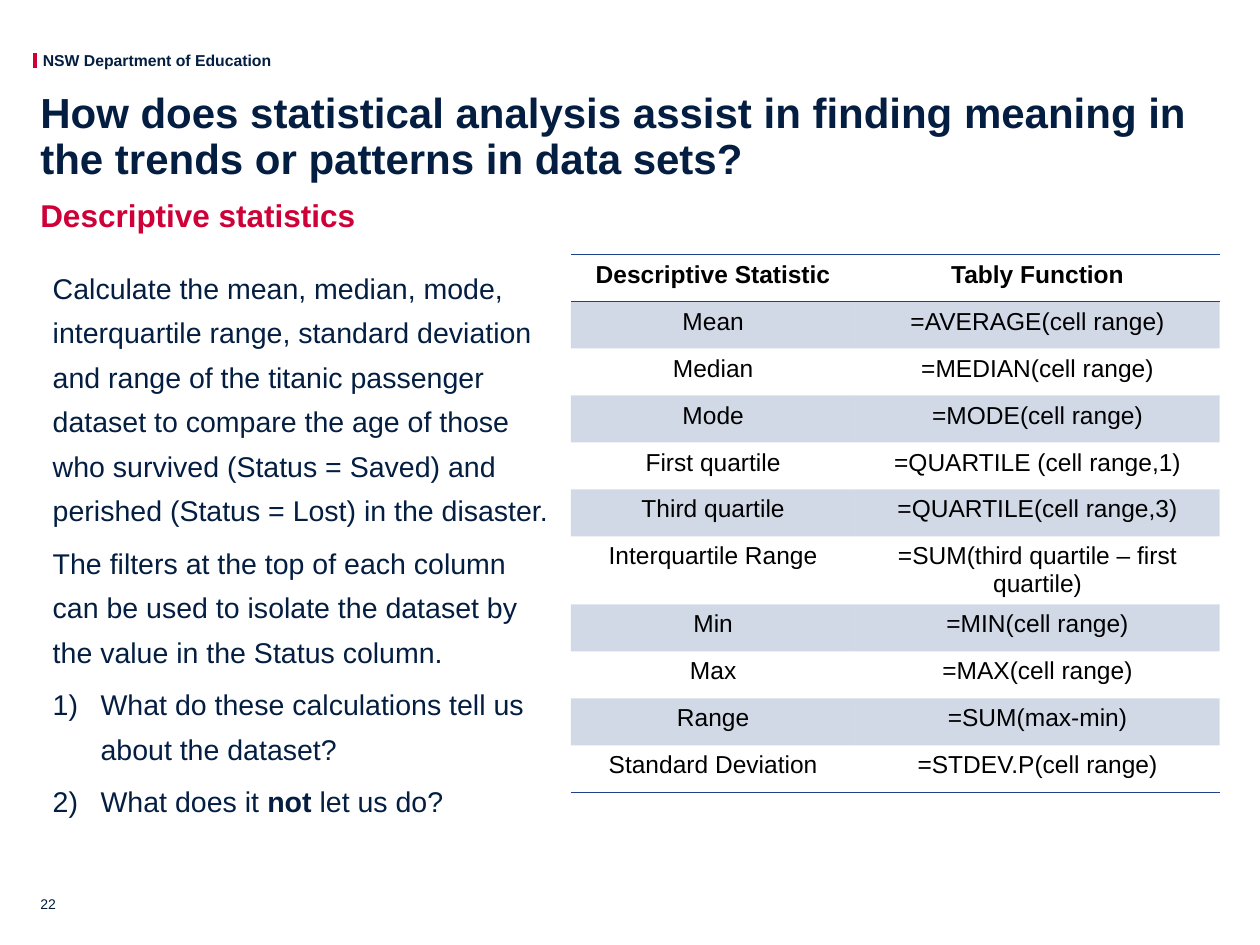
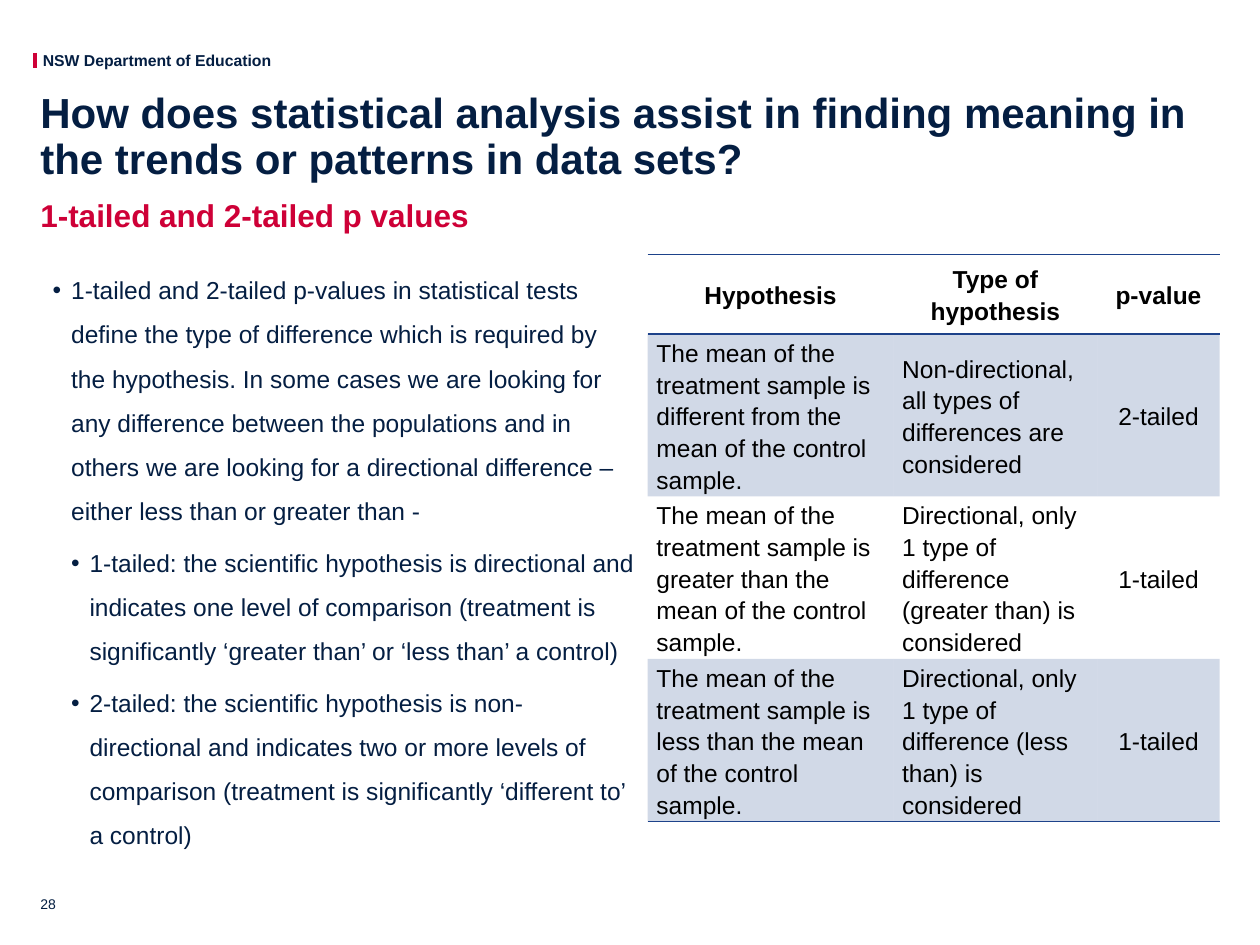
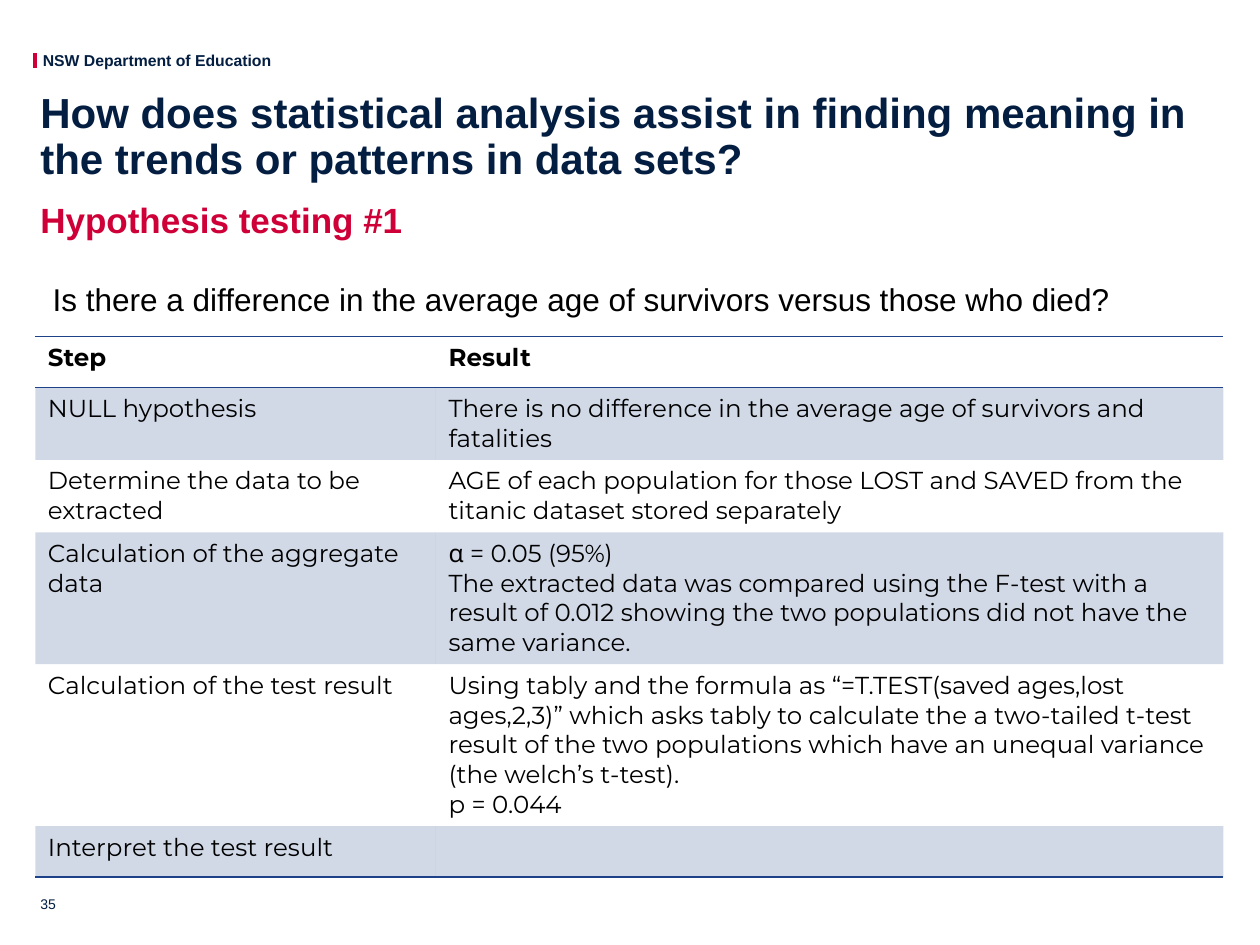
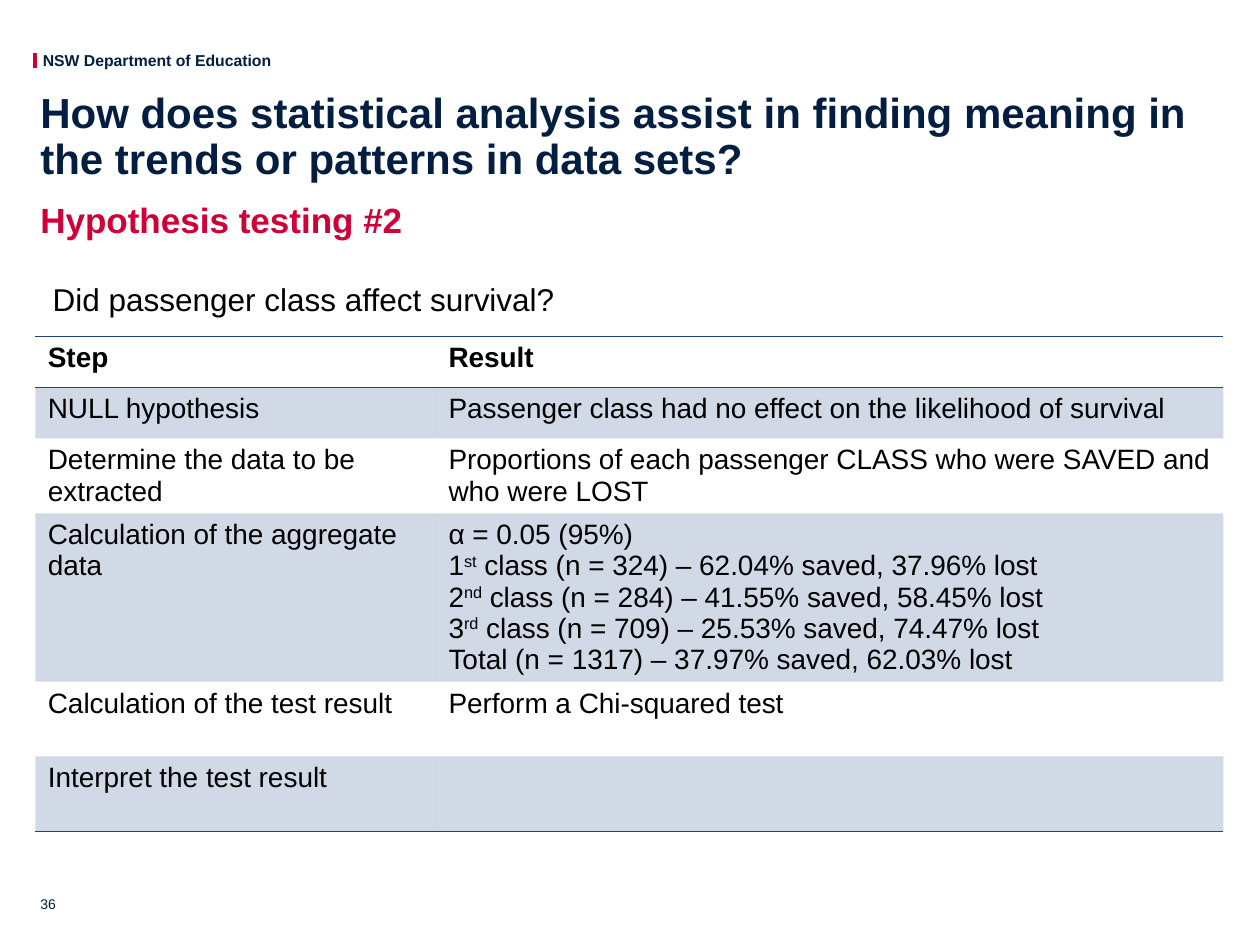
from dataclasses import dataclass

from lxml import etree
from pptx import Presentation
from pptx.dml.color import RGBColor
from pptx.enum.shapes import MSO_CONNECTOR
from pptx.enum.text import MSO_ANCHOR, MSO_AUTO_SIZE, PP_ALIGN
from pptx.oxml.ns import qn
from pptx.util import Inches, Pt

LEFT, MID = PP_ALIGN.LEFT, PP_ALIGN.CENTER
TOP, HALF, LOW = MSO_ANCHOR.TOP, MSO_ANCHOR.MIDDLE, MSO_ANCHOR.BOTTOM
STRAIGHT = MSO_CONNECTOR.STRAIGHT
NO_FIT = MSO_AUTO_SIZE.NONE


@dataclass(frozen=True)
class Theme:
    navy: str = "041E42"
    red: str = "CE0037"
    blue: str = "1D428A"
    black: str = "000000"
    font: str = "Arial"
    alt: str = "Montserrat"
    title: float = 24
    head: float = 20
    sub: float = 18
    large: float = 16.3
    body: float = 16
    small: float = 14
    brand: float = 9
    page: float = 8
    after: float = 4.5


T = Theme()
WIDTH, HEIGHT = Inches(10), Inches(7.5)
COL, ROW = WIDTH / 100, HEIGHT / 75
PAD = (1, 0.5, 1, 0.5)
FLUSH = (0, 0, 0, 0)
PLAIN = "{2D5ABB26-0587-4C30-8999-92F81FD0307C}"
TITLE = ("How does statistical analysis assist in finding meaning in "
         "the trends or patterns in data sets?")
STEPS = ["NULL hypothesis", "Determine the data to be extracted",
         "Calculation of the aggregate data",
         "Calculation of the test result", "Interpret the test result"]


def place(box):
    x, y, w, h = box
    return round(x * COL), round(y * ROW), round(w * COL), round(h * ROW)


def inset(item, pad):
    item.margin_left, item.margin_right = round(pad[0] * COL), round(pad[2] * COL)
    item.margin_top, item.margin_bottom = round(pad[1] * ROW), round(pad[3] * ROW)


def mark(para, kind, hang, level):
    prop = para._p.get_or_add_pPr()
    prop.set("marL", str(round(hang * (level + 1) * COL)))
    prop.set("indent", str(round(-hang * COL)))
    if kind == "number":
        etree.SubElement(prop, qn("a:buAutoNum"), type="arabicParenR")
    else:
        etree.SubElement(prop, qn("a:buFont"), typeface=T.font)
        etree.SubElement(prop, qn("a:buChar"), char="•")


def write(frame, text, size=T.small, color=T.navy, font=T.font, bold=False,
          align=LEFT, line=None, after=None, bullet=None, hang=0, level=0,
          raised=False):
    para = frame.add_paragraph() if frame.text else frame.paragraphs[0]
    para.alignment, para.level = align, level
    if line:
        para.line_spacing = line
    if after:
        para.space_after = Pt(after)
    if bullet:
        mark(para, bullet, hang, level)
    for i, part in enumerate(text.split("|")):
        run = para.add_run()
        run.text = part
        look = run.font
        look.name, look.size = font, Pt(size)
        look.color.rgb = RGBColor.from_string(color)
        look.bold = bold or (i % 2 == 1 and not raised)
        if raised and i % 2:
            run._r.get_or_add_rPr().set("baseline", "30000")


def area(slide, box, pad=PAD, anchor=TOP, wrap=True):
    frame = slide.shapes.add_textbox(*place(box)).text_frame
    frame.word_wrap, frame.vertical_anchor = wrap, anchor
    frame.auto_size = NO_FIT
    inset(frame, pad)
    return frame


def brand(slide, box):
    x, y, w, h = box
    left, top, _, tall = place((x, y + 0.2, w, h - 0.3))
    bar = slide.shapes.add_connector(STRAIGHT, left, top, left, top + tall)
    bar.line.color.rgb = RGBColor.from_string(T.red)
    bar.line.width = Pt(2.5)
    etree.SubElement(bar.element.spPr, qn("a:effectLst"))
    name = area(slide, (x + 0.6, y, w - 0.6, h), pad=FLUSH, wrap=False)
    write(name, "NSW Department of Education", size=T.brand, bold=True)


def start(deck, topic, page, size=T.sub):
    slide = deck.slides.add_slide(deck.slide_layouts[5])
    title = slide.shapes.title
    title.left, title.top, title.width, title.height = place((3.2, 8.2, 94.3, 5.5))
    frame = title.text_frame
    frame.word_wrap, frame.auto_size = True, NO_FIT
    frame.vertical_anchor = HALF
    inset(frame, FLUSH)
    write(frame, TITLE, size=T.title, bold=True, line=0.9)
    brand(slide, (2.8, 4, 18.9, 1.5))
    head = area(slide, (3.2, 13.6, 94.4, 4.6), pad=(0, 0.5, 1, 0.5))
    write(head, topic, size=size, color=T.red, bold=True, line=1.5, after=T.after)
    foot = area(slide, (3.2, 68.4, 3.3, 4), pad=FLUSH, anchor=LOW)
    write(foot, str(page), size=T.page)
    return slide


def edge(cell, sides):
    prop = cell._tc.get_or_add_tcPr()
    for i, side in enumerate(sides):
        line = etree.Element(qn("a:ln" + side), w=str(Pt(1)))
        fill = etree.SubElement(line, qn("a:solidFill"))
        etree.SubElement(fill, qn("a:srgbClr"), val=T.blue)
        prop.insert(i, line)


def tint(cell, on):
    if not on:
        cell.fill.background()
        return
    cell.fill.solid()
    cell.fill.fore_color.rgb = RGBColor.from_string(T.blue)
    tone = cell._tc.get_or_add_tcPr().find(".//" + qn("a:srgbClr"))
    etree.SubElement(tone, qn("a:alpha"), val="20000")


def grid(slide, spot, cols, tall, rows, aligns, pad=PAD, anchor=TOP, **form):
    box = (*spot, sum(cols), sum(tall))
    item = slide.shapes.add_table(len(rows), len(cols), *place(box))
    for style in item.element.iter(qn("a:tableStyleId")):
        style.text = PLAIN
    table = item.table
    for col, wide in zip(table.columns, cols):
        col.width = round(wide * COL)
    for r, (row, high) in enumerate(zip(rows, tall)):
        table.rows[r].height = round(high * ROW)
        for c, text in enumerate(row):
            cell = table.cell(r, c)
            inset(cell, pad)
            cell.vertical_anchor = anchor
            tint(cell, r % 2)
            edge(cell, "TB" if r == 0 else "B" if r == len(rows) - 1 else "")
            for part in text.split("\n") if text else []:
                write(cell.text_frame, part, color=T.black, bold=r == 0,
                      align=aligns[c] if r else aligns[-1], raised=True, **form)


def describe(deck):
    slide = start(deck, "Descriptive statistics", 22)
    frame = area(slide, (3.2, 20.2, 42.1, 46.3))
    form = dict(size=T.large, line=1.3, after=T.after)
    write(frame, "Calculate the mean, median, mode, interquartile range, standard "
          "deviation and range of the titanic passenger dataset to compare the age "
          "of those who survived (Status = Saved) and perished (Status = Lost) in "
          "the disaster.", **form)
    write(frame, "The filters at the top of each column can be used to isolate the "
          "dataset by the value in the Status column.", **form)
    for ask in ("What do these calculations tell us about the dataset?",
                "What does it |not |let us do?"):
        write(frame, ask, bullet="number", hang=3.8, **form)
    rows = [("Descriptive Statistic", "Tably Function"),
            ("Mean", "=AVERAGE(cell range)"),
            ("Median", "=MEDIAN(cell range)"),
            ("Mode", "=MODE(cell range)"),
            ("First quartile", "=QUARTILE (cell range,1)"),
            ("Third quartile", "=QUARTILE(cell range,3)"),
            ("Interquartile Range", "=SUM(third quartile – first quartile)"),
            ("Min", "=MIN(cell range)"),
            ("Max", "=MAX(cell range)"),
            ("Range", "=SUM(max-min)"),
            ("Standard Deviation", "=STDEV.P(cell range)")]
    tall = [3.73] * 6 + [5.4] + [3.73] * 4
    grid(slide, (45.3, 20.2), (22.6, 28.9), tall, rows, (MID, MID))


def tails(deck):
    slide = start(deck, "1-tailed and 2-tailed p values", 28)
    frame = area(slide, (3.2, 20.2, 48.2, 47))
    points = [
        (0, "1-tailed and 2-tailed p-values in statistical tests define the type of "
            "difference which is required by the hypothesis. In some cases we are "
            "looking for any difference between the populations and in others we are "
            "looking for a directional difference – either less than or greater "
            "than -"),
        (1, "1-tailed: the scientific hypothesis is directional and indicates one "
            "level of comparison (treatment is significantly ‘greater than’ or ‘less "
            "than’ a control)"),
        (1, "2-tailed: the scientific hypothesis is non-directional and indicates two "
            "or more levels of comparison (treatment is significantly ‘different to’ "
            "a control)")]
    for level, text in points:
        write(frame, text, line=1.5, after=T.after, bullet="dot", hang=1.46,
              level=level)
    mean = "The mean of the treatment sample is {} the mean of the control sample."
    way = "Directional, only 1 type of difference ({}) is considered"
    rows = [("Hypothesis", "Type of hypothesis", "p-value"),
            (mean.format("different from"),
             "Non-directional, all types of differences are considered", "2-tailed")]
    rows += [(mean.format(side), way.format(side), "1-tailed")
             for side in ("greater than", "less than")]
    grid(slide, (51.4, 20.2), (19.5, 16.2, 9.7), (6.3, 12.9, 12.9, 12.9), rows,
         (LEFT, LEFT, MID), pad=(0.7, 0, 0.7, 0), anchor=HALF, line=1.15)


def trial(deck, number, page, ask, facts, tall, **form):
    slide = start(deck, f"Hypothesis testing #{number}", page, size=T.head)
    frame = area(slide, (3.2, 20.2, 94.4, 46.3))
    write(frame, ask, size=T.sub, color=T.black, line=1.5, after=T.after)
    rows = [("Step", "Result"), *zip(STEPS, facts)]
    grid(slide, (2.8, 26.7), (31.8, 62.5), tall, rows, (LEFT, LEFT), **form)


def main():
    deck = Presentation()
    deck.slide_width, deck.slide_height = WIDTH, HEIGHT
    describe(deck)
    tails(deck)
    trial(deck, 1, 35,
          "Is there a difference in the average age of survivors versus those who died?",
          ["There is no difference in the average age of survivors and fatalities",
           "AGE of each population for those LOST and SAVED from the titanic dataset "
           "stored separately",
           "α = 0.05 (95%)\nThe extracted data was compared using the F-test with a "
           "result of 0.012 showing the two populations did not have the same variance.",
           "Using tably and the formula as “=T.TEST(saved ages,lost ages,2,3)” which "
           "asks tably to calculate the a two-tailed t-test result of the two "
           "populations which have an unequal variance (the welch’s t-test).\n"
           "p = 0.044", ""],
          (4.05, 5.75, 5.75, 10.45, 12.85, 4.05), size=T.small, font=T.alt)
    trial(deck, 2, 36, "Did passenger class affect survival?",
          ["Passenger class had no effect on the likelihood of survival",
           "Proportions of each passenger CLASS who were SAVED and who were LOST",
           "α = 0.05 (95%)\n"
           "1|st| class (n = 324) – 62.04% saved, 37.96% lost\n"
           "2|nd| class (n = 284) – 41.55% saved, 58.45% lost\n"
           "3|rd| class (n = 709) – 25.53% saved, 74.47% lost\n"
           "Total (n = 1317) – 37.97% saved, 62.03% lost",
           "Perform a Chi-squared test", ""],
          (4.05, 4.05, 5.95, 13.35, 5.95, 5.95), size=T.body)
    deck.save("out.pptx")


if __name__ == "__main__":
    main()
